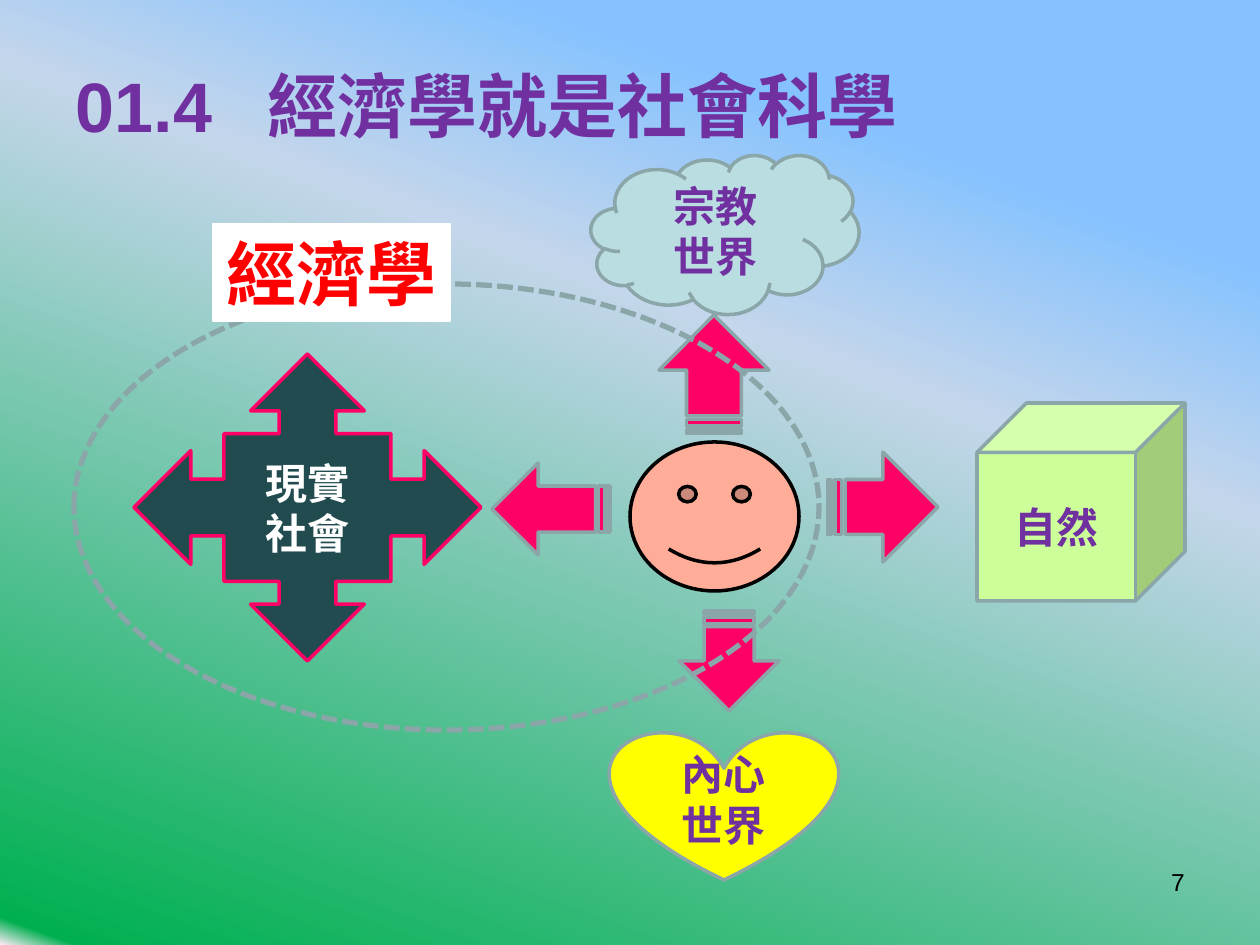
from dataclasses import dataclass
from typing import Optional

from lxml import etree
from pptx import Presentation
from pptx.dml.color import RGBColor
from pptx.enum.dml import MSO_LINE
from pptx.enum.shapes import MSO_SHAPE
from pptx.enum.text import MSO_ANCHOR, MSO_AUTO_SIZE, PP_ALIGN
from pptx.oxml.ns import qn
from pptx.util import Emu, Pt

SMILEY, HEART, CLOUD = MSO_SHAPE.SMILEY_FACE, MSO_SHAPE.HEART, MSO_SHAPE.CLOUD
QUAD, CUBE = MSO_SHAPE.QUAD_ARROW_CALLOUT, MSO_SHAPE.CUBE
ARROW, OVAL, RECT = MSO_SHAPE.STRIPED_RIGHT_ARROW, MSO_SHAPE.OVAL, MSO_SHAPE.RECTANGLE
SYS_DASH = MSO_LINE.SQUARE_DOT
MIDDLE, NO_FIT, GROW = MSO_ANCHOR.MIDDLE, MSO_AUTO_SIZE.NONE, MSO_AUTO_SIZE.SHAPE_TO_FIT_TEXT
LEFT, CENTER, RIGHT = PP_ALIGN.LEFT, PP_ALIGN.CENTER, PP_ALIGN.RIGHT

EMU_PER_PX = 914400 / 126
FONT = "Arial"
PURPLE, GREY, PINK, WHITE = "7030A0", "8AA6A8", "FF0066", "FFFFFF"
SKY = [(19, "85C2FF"), (37, "C4D6EB"), (98, "00B050"), (100, "FFEBFA")]
SKY_ANGLE = 110


@dataclass(frozen=True)
class Figure:
    """A preset shape with its box in px, colours and optional lines of text."""

    kind: MSO_SHAPE
    box: tuple[int, int, int, int]
    fill: Optional[str]
    line: str = GREY
    weight: float = 2
    rotation: int = 0
    lines: tuple[str, ...] = ()
    color: str = PURPLE
    size: int = 24


FIGURES = [
    Figure(SMILEY, (630, 442, 169, 149), "FFAD99", "000000"),
    Figure(HEART, (610, 731, 228, 149), "FFFF00", lines=("內心", "世界")),
    Figure(CLOUD, (591, 155, 268, 159), "BADDE1", lines=("宗教", "世界")),
    Figure(QUAD, (134, 354, 347, 307), "224B50", PINK, lines=("現實", "社會"), color=WHITE),
    Figure(CUBE, (977, 403, 208, 198), "CCFF99", lines=("自然",)),
    Figure(ARROW, (828, 452, 110, 110), PINK),
    Figure(ARROW, (655, 319, 118, 110), PINK, rotation=270),
    Figure(ARROW, (679, 611, 100, 100), PINK, rotation=90),
    Figure(ARROW, (492, 463, 118, 92), PINK, rotation=180),
]
SCOPE = Figure(OVAL, (74, 284, 745, 446), None, weight=3)
LABEL = Figure(RECT, (213, 224, 237, 97), WHITE, WHITE, 0.75,
               lines=("經濟學",), color="FF0000", size=40)


def px(value: int) -> Emu:
    """Turn px into EMU."""
    return Emu(round(value * EMU_PER_PX))


def rgb(value: str) -> RGBColor:
    """Turn a hex string into a colour."""
    return RGBColor.from_string(value)


def write(tf, lines, size, color, align, bold=True):
    """Fill a text frame with equally formatted paragraphs."""
    tf.text = "\n".join(lines)
    for p in tf.paragraphs:
        p.alignment = align
        p.font.name, p.font.size, p.font.bold = FONT, Pt(size), bold
        p.font.color.rgb = rgb(color)


def paint_background(slide, stops, angle):
    """Give the slide a linear gradient of several stops."""
    fill = slide.background.fill
    fill.gradient()
    grad = slide.background._cSld.find(".//" + qn("a:gradFill"))
    for child in list(grad):
        grad.remove(child)
    stop_list = etree.SubElement(grad, qn("a:gsLst"))
    for percent, color in stops:
        stop = etree.SubElement(stop_list, qn("a:gs"), pos=str(percent * 1000))
        etree.SubElement(stop, qn("a:srgbClr"), val=color)
    etree.SubElement(grad, qn("a:lin"), ang=str(angle * 60000), scaled="0")


def add_title(slide, number, text):
    """Place the title with its number and a tab stop before the text."""
    sp = slide.shapes.title
    sp.left, sp.top, sp.width, sp.height = map(px, (44, 26, 1134, 158))
    tf = sp.text_frame
    tf.word_wrap, tf.auto_size, tf.vertical_anchor = True, NO_FIT, MIDDLE
    tf.margin_left = px(32)
    write(tf, [f"{number}\t{text}"], 40, PURPLE, LEFT)
    tabs = etree.Element(qn("a:tabLst"))
    etree.SubElement(tabs, qn("a:tab"), pos=str(px(192)), algn="l")
    tf.paragraphs[0].font._element.addprevious(tabs)


def add_figure(slide, figure: Figure):
    """Draw one figure and return its shape."""
    sp = slide.shapes.add_shape(figure.kind, *map(px, figure.box))
    sp.shadow.inherit = False
    sp.rotation = figure.rotation
    if figure.fill:
        sp.fill.solid()
        sp.fill.fore_color.rgb = rgb(figure.fill)
    else:
        sp.fill.background()
    sp.line.color.rgb = rgb(figure.line)
    sp.line.width = Pt(figure.weight)
    if figure.lines:
        sp.text_frame.vertical_anchor = MIDDLE
        write(sp.text_frame, figure.lines, figure.size, figure.color, CENTER)
    return sp


def add_page_number(slide, number):
    """Write the page number at the lower right."""
    tf = slide.shapes.add_textbox(*map(px, (903, 861, 294, 65))).text_frame
    tf.word_wrap = True
    write(tf, [number], 14, "000000", RIGHT, bold=False)


def main():
    """Build the slide and save it."""
    prs = Presentation()
    prs.slide_width, prs.slide_height = px(1260), px(945)
    slide = prs.slides.add_slide(prs.slide_layouts[5])
    paint_background(slide, SKY, SKY_ANGLE)
    add_title(slide, "01.4", "經濟學就是社會科學")
    for figure in FIGURES:
        add_figure(slide, figure)
    add_page_number(slide, "7")
    add_figure(slide, SCOPE).line.dash_style = SYS_DASH
    tf = add_figure(slide, LABEL).text_frame
    tf.word_wrap, tf.auto_size = False, GROW
    prs.save("out.pptx")


if __name__ == "__main__":
    main()
